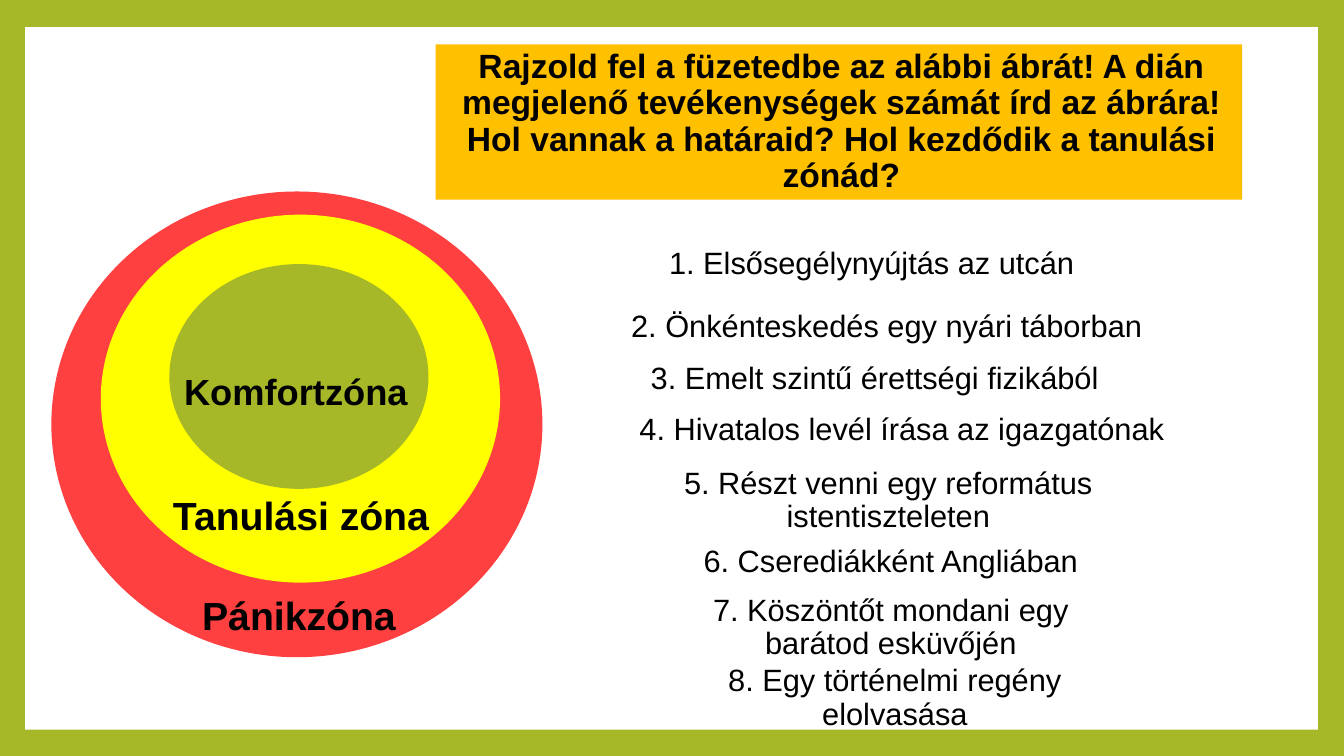
from pptx import Presentation
from pptx.dml.color import RGBColor
from pptx.enum.shapes import MSO_SHAPE
from pptx.enum.text import MSO_ANCHOR, PP_ALIGN
from pptx.util import Inches, Pt

GREEN = "A6B727"


def add_filled(kind, left, top, width, height, color):
    shape = page.shapes.add_shape(kind, Inches(left), Inches(top), Inches(width), Inches(height))
    shape.shadow.inherit = False
    shape.fill.solid()
    shape.fill.fore_color.rgb = RGBColor.from_string(color)
    shape.line.fill.background()
    return shape


def write(box, text, size, bold=False, spacing=0.9, anchor=MSO_ANCHOR.TOP):
    frame = box.text_frame
    frame.word_wrap = True
    frame.vertical_anchor = anchor
    frame.text = text
    para = frame.paragraphs[0]
    para.alignment = PP_ALIGN.CENTER
    para.line_spacing = spacing
    para._p.get_or_add_pPr().set("marL", str(Inches(0.05)))
    font = para.runs[0].font
    font.name = "Arial"
    font.size = Pt(size)
    font.bold = bold
    font.color.rgb = RGBColor.from_string("000000")


deck = Presentation()
deck.slide_width = Inches(13.33)
deck.slide_height = Inches(7.5)
page = deck.slides.add_slide(deck.slide_layouts[6])
page.background.fill.solid()
page.background.fill.fore_color.rgb = RGBColor.from_string(GREEN)

add_filled(MSO_SHAPE.RECTANGLE, 0.25, 0.27, 12.82, 6.97, "FFFFFF")

zones = [
    (0.51, 1.9, 4.87, 4.62, "FF4040"),
    (1, 2.13, 3.96, 3.65, "FFFF00"),
    (1.68, 2.62, 2.57, 2.23, GREEN),
]
for zone in zones:
    add_filled(MSO_SHAPE.OVAL, *zone)

task = add_filled(MSO_SHAPE.RECTANGLE, 4.32, 0.44, 8, 1.54, "FFC000")
write(
    task,
    "Rajzold fel a füzetedbe az alábbi ábrát! A dián megjelenő tevékenységek számát "
    "írd az ábrára! Hol vannak a határaid? Hol kezdődik a tanulási zónád?",
    24, bold=True, anchor=MSO_ANCHOR.MIDDLE,
)

zone_labels = [
    ("Pánikzóna", 1.33, 5.87, 0.76, 28, 0.9),
    ("Tanulási zóna", 1.35, 4.88, 0.76, 28, 0.9),
    ("Komfortzóna", 1.3, 3.7, 0.47, 25.9, 0.8),
]
for text, left, top, height, size, spacing in zone_labels:
    box = page.shapes.add_textbox(Inches(left), Inches(top), Inches(3.22), Inches(height))
    write(box, text, size, bold=True, spacing=spacing)

activities = [
    ("Elsősegélynyújtás az utcán", 6.43, 2.41, 4.38, 0.72),
    ("Önkénteskedés egy nyári táborban", 6.1, 3.04, 5.34, 0.7),
    ("Emelt szintű érettségi fizikából", 5.98, 3.55, 5.34, 0.59),
    ("Hivatalos levél írása az igazgatónak", 5.75, 4.06, 6.34, 0.68),
    ("Részt venni egy református istentiszteleten", 6.31, 4.59, 4.95, 0.52),
    ("Cserediákként Angliában", 6.75, 5.37, 4.12, 0.52),
    ("Köszöntőt mondani egy barátod esküvőjén", 6.75, 5.85, 4.12, 0.71),
    ("Egy történelmi regény elolvasása", 6.79, 6.55, 4.12, 0.95),
]
for number, (text, left, top, width, height) in enumerate(activities, 1):
    box = page.shapes.add_textbox(Inches(left), Inches(top), Inches(width), Inches(height))
    write(box, f"{number}. {text}", 22)

deck.save("out.pptx")
